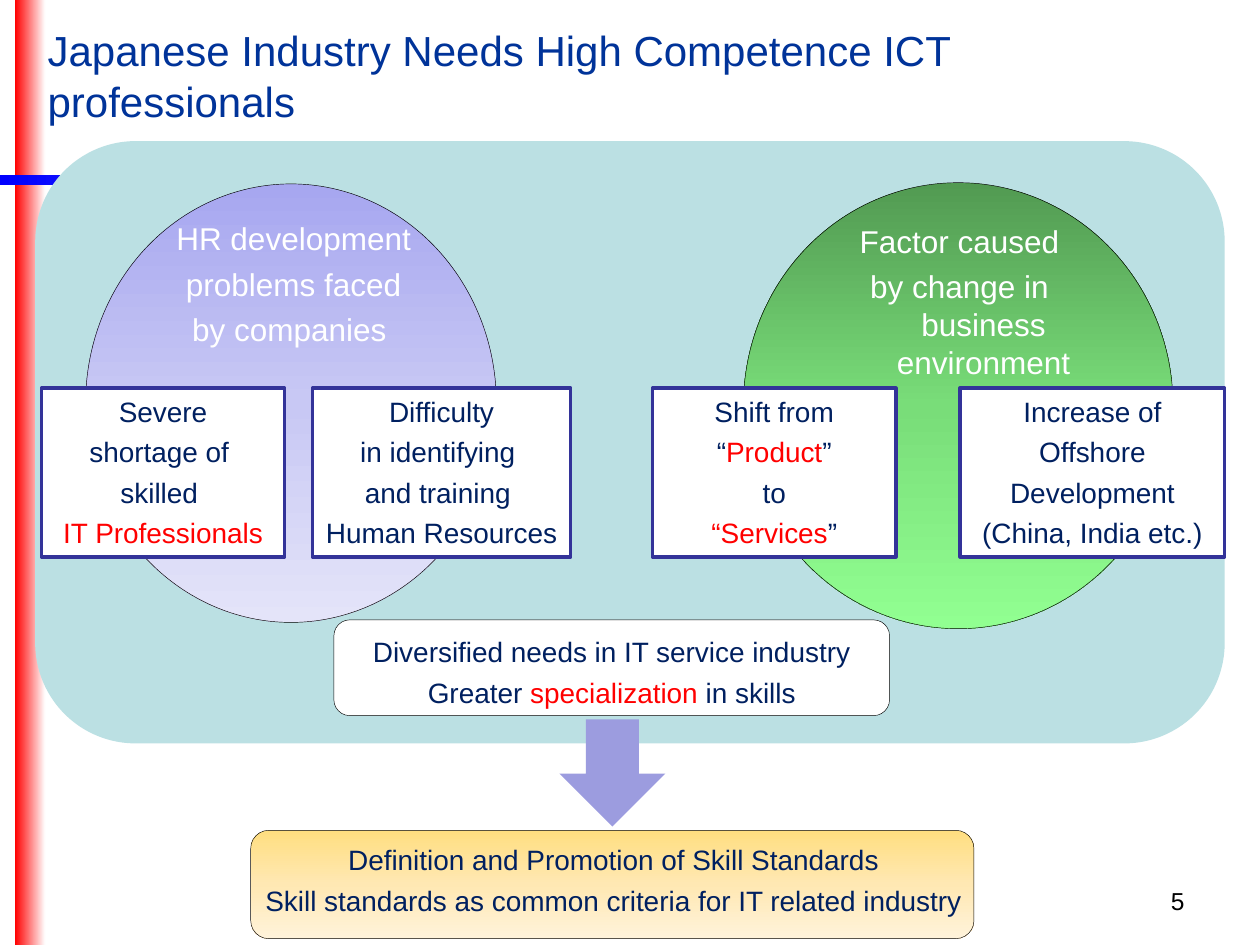
import copy
from typing import NamedTuple, Optional

import pptx
import pptx.dml.color
import pptx.enum.shapes
import pptx.enum.text
import pptx.oxml.ns
import pptx.util

RGB = pptx.dml.color.RGBColor
SHAPE = pptx.enum.shapes.MSO_SHAPE
ALIGN = pptx.enum.text.PP_ALIGN
ANCHOR = pptx.enum.text.MSO_ANCHOR

WHITE = RGB(0xFF, 0xFF, 0xFF)
BLACK = RGB(0x00, 0x00, 0x00)
RED = RGB(0xFF, 0x00, 0x00)
BLUE = RGB(0x00, 0x00, 0xFF)
TITLE_BLUE = RGB(0x00, 0x33, 0x99)
NAVY = RGB(0x00, 0x20, 0x60)
INDIGO = RGB(0x33, 0x33, 0x99)
TEAL = RGB(0xBB, 0xE0, 0xE3)
LAVENDER = RGB(0x9C, 0x9C, 0xDF)
VIOLETS = (RGB(0xA7, 0xA7, 0xF0), RGB(0xC8, 0xC8, 0xF4), RGB(0xE4, 0xE4, 0xF9))
GREENS = (RGB(0x52, 0x9A, 0x52), RGB(0x79, 0xDD, 0x79), RGB(0x91, 0xFF, 0x91))
AMBERS = (RGB(0xFF, 0xDE, 0x80), RGB(0xFF, 0xE8, 0xB3), RGB(0xFF, 0xF3, 0xDA))

SLIDE_WIDTH = pptx.util.Inches(10)
SLIDE_HEIGHT = pptx.util.Inches(7.5)
COLUMNS, ROWS = 100, 75
CARD_ROW, CARD_ROWS = 30.8, 13.4
HANGING = pptx.util.Inches(0.38)
DOWNWARD, RIGHTWARD = 270, 0


class Place(NamedTuple):
    col: float
    row: float
    cols: float
    rows: float

    def box(self) -> tuple[int, ...]:
        return (
            round(self.col * SLIDE_WIDTH / COLUMNS),
            round(self.row * SLIDE_HEIGHT / ROWS),
            round(self.cols * SLIDE_WIDTH / COLUMNS),
            round(self.rows * SLIDE_HEIGHT / ROWS),
        )


class Panel(NamedTuple):
    place: Place
    kind: SHAPE
    colors: tuple[RGB, ...]
    angle: int = DOWNWARD
    outline: Optional[RGB] = None
    weight: float = 0.25


class Label(NamedTuple):
    place: Place
    lines: tuple[str, ...]
    size: int = 16
    color: RGB = NAVY
    align: ALIGN = ALIGN.CENTER
    anchor: ANCHOR = ANCHOR.TOP
    hanging: bool = True


class Card(NamedTuple):
    col: float
    cols: float
    lines: tuple[str, ...]


BACKDROP = (
    Panel(Place(1.2, 0, 2.4, 75), SHAPE.RECTANGLE, (RED, WHITE), RIGHTWARD),
    Panel(Place(0, 13.9, 94.1, 0.8), SHAPE.RECTANGLE, (BLUE, WHITE), RIGHTWARD),
    Panel(Place(19.9, 65.9, 57.4, 8.6), SHAPE.ROUNDED_RECTANGLE, AMBERS, outline=BLACK),
    Panel(Place(2.8, 11.2, 94.4, 47.8), SHAPE.ROUNDED_RECTANGLE, (TEAL,)),
    Panel(Place(6.8, 14.6, 32.6, 34.8), SHAPE.OVAL, VIOLETS, outline=BLACK),
    Panel(Place(59, 14.5, 34.1, 35.4), SHAPE.OVAL, GREENS, outline=BLACK),
)

CARDS = (
    Card(3.3, 19.3, ("Severe", "shortage of ", "skilled ", "*IT Professionals*")),
    Card(24.8, 20.5, ("Difficulty", "in identifying ", "and training ", "Human Resources")),
    Card(51.8, 19.3, ("Shift from", "“*Product*”", "to", "*“Services*”")),
    Card(76.2, 21, ("Increase of", "Offshore", "Development", "(China, India etc.)")),
)

CONCLUSION = (
    Panel(Place(26.5, 49.2, 44.1, 7.6), SHAPE.ROUNDED_RECTANGLE, (WHITE,), outline=BLACK),
    Panel(Place(44.4, 57.1, 8.4, 8.5), SHAPE.DOWN_ARROW, (LAVENDER,)),
)

LABELS = (
    Label(Place(2.8, 0.5, 78, 10.9),
          ("Japanese Industry Needs High Competence ICT professionals",),
          24, TITLE_BLUE, ALIGN.LEFT, ANCHOR.MIDDLE, False),
    Label(Place(10.4, 16.9, 25.8, 11.3),
          ("HR development", "problems faced", "by companies "), 18, WHITE),
    Label(Place(62.9, 17.1, 26.5, 13.7),
          ("Factor caused", "by change in business environment"), 18, WHITE),
    Label(Place(27, 49.9, 43.1, 6.9),
          ("Diversified needs in IT service industry",
           "Greater *specialization* in skills")),
    Label(Place(18.5, 66.4, 60.4, 6.9),
          ("Definition and Promotion of Skill Standards",
           "Skill standards as common criteria for IT related industry")),
    Label(Place(71.7, 69.8, 23.3, 3.1), ("5",), 14, BLACK, ALIGN.RIGHT, hanging=False),
)


def apply_format(target, values: dict) -> None:
    for key, value in values.items():
        setattr(target, key, value)


def paint(fill, colors: tuple[RGB, ...], angle: int, properties) -> None:
    if len(colors) == 1:
        fill.solid()
        fill.fore_color.rgb = colors[0]
        return
    fill.gradient()
    fill.gradient_angle = angle
    stop_list = properties.find(".//" + pptx.oxml.ns.qn("a:gsLst"))
    for _ in colors[2:]:
        stop_list.insert(1, copy.deepcopy(stop_list[0]))
    for index, (stop, color) in enumerate(zip(fill.gradient_stops, colors)):
        stop.position = index / (len(colors) - 1)
        stop.color.rgb = color


def draw_panel(slide, panel: Panel):
    shape = slide.shapes.add_shape(panel.kind, *panel.place.box())
    shape.shadow.inherit = False
    paint(shape.fill, panel.colors, panel.angle, shape._element.spPr)
    if panel.outline is None:
        shape.line.fill.background()
    else:
        shape.line.color.rgb = panel.outline
        shape.line.width = pptx.util.Pt(panel.weight)
    return shape


def write(frame, label: Label, side_margin: float = 0.1) -> None:
    margin = pptx.util.Inches(side_margin)
    apply_format(frame, {
        "word_wrap": True,
        "vertical_anchor": label.anchor,
        "margin_left": margin,
        "margin_right": margin,
    })
    for index, line in enumerate(label.lines):
        paragraph = frame.add_paragraph() if index else frame.paragraphs[0]
        paragraph.alignment = label.align
        if index:
            paragraph.space_before = pptx.util.Pt(label.size / 4)
        if label.hanging:
            properties = paragraph._p.get_or_add_pPr()
            properties.set("marL", str(HANGING))
            properties.set("indent", str(-HANGING))
        for part, text in enumerate(line.split("*")):
            if text:
                run = paragraph.add_run()
                run.text = text
                apply_format(run.font, {"name": "Arial", "size": pptx.util.Pt(label.size)})
                run.font.color.rgb = RED if part % 2 else label.color


def draw_card(slide, card: Card) -> None:
    place = Place(card.col, CARD_ROW, card.cols, CARD_ROWS)
    shape = draw_panel(slide, Panel(place, SHAPE.RECTANGLE, (WHITE,), outline=INDIGO, weight=2))
    write(shape.text_frame, Label(place, card.lines), 0.05)


def main() -> None:
    deck = pptx.Presentation()
    apply_format(deck, {"slide_width": SLIDE_WIDTH, "slide_height": SLIDE_HEIGHT})
    slide = deck.slides.add_slide(deck.slide_layouts[6])
    for panel in BACKDROP:
        draw_panel(slide, panel)
    for card in CARDS:
        draw_card(slide, card)
    for panel in CONCLUSION:
        draw_panel(slide, panel)
    for label in LABELS:
        write(slide.shapes.add_textbox(*label.place.box()).text_frame, label)
    deck.save("out.pptx")


if __name__ == "__main__":
    main()
